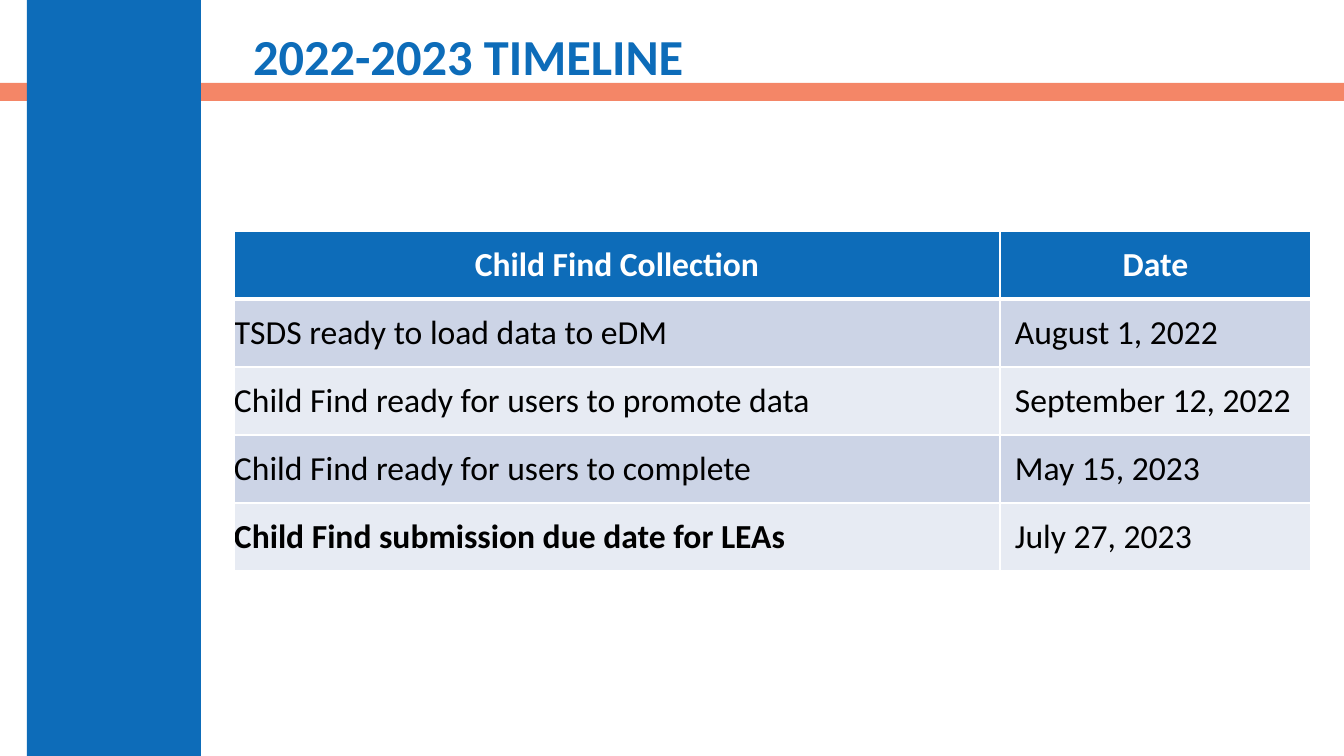
"""Build the 2022-2023 timeline slide with its Child Find date table."""
from pptx import Presentation
from pptx.dml.color import RGBColor
from pptx.enum.shapes import MSO_SHAPE
from pptx.enum.text import MSO_ANCHOR, PP_ALIGN
from pptx.oxml import parse_xml
from pptx.oxml.ns import nsdecls
from pptx.util import Emu, Pt

PX = 914400 / 100.8
BLUE, CORAL, WHITE, BLACK = "0D6CB9", "F16038", "FFFFFF", "000000"
BANDS = ["E7EBF3", "CCD4E6"]
ROWS = [
    ("Child Find Collection", "Date"),
    ("TSDS ready to load data to eDM", "August 1, 2022"),
    ("Child Find ready for users to promote data", "September 12, 2022"),
    ("Child Find ready for users to complete", "May 15, 2023"),
    ("Child Find submission due date for LEAs", "July 27, 2023"),
]


def px(*lengths):
    return [Emu(round(n * PX)) for n in lengths]


def write(tf, text, size=24, color=BLACK, bold=False, align=PP_ALIGN.LEFT, spacing=1.0):
    p = tf.paragraphs[0]
    p.alignment, p.line_spacing = align, spacing
    r = p.add_run()
    r.text = text
    r.font.name, r.font.size, r.font.bold = "Calibri", Pt(size), bold
    r.font.color.rgb = RGBColor.from_string(color)


prs = Presentation()
prs.slide_width, prs.slide_height = px(1344, 756)
s = prs.slides.add_slide(prs.slide_layouts[5])

for box, color, alpha in [((0, 83, 1344, 18), CORAL, 76), ((27, 0, 174, 756), BLUE, 100)]:
    sp = s.shapes.add_shape(MSO_SHAPE.RECTANGLE, *px(*box))
    sp.shadow.inherit = False
    sp.line.fill.background()
    sp.fill.solid()
    sp.fill.fore_color.rgb = RGBColor.from_string(color)
    if alpha < 100:
        clr = sp.fill._xPr.solidFill.srgbClr
        clr.append(parse_xml(f'<a:alpha {nsdecls("a")} val="{alpha * 1000}"/>'))

title = s.shapes.title
title.left, title.top, title.width, title.height = px(243, 18, 1061, 83)
title.text_frame.vertical_anchor = MSO_ANCHOR.MIDDLE
write(title.text_frame, "2022-2023 TIMELINE", size=36, color=BLUE, bold=True, spacing=0.9)
s.shapes._spTree.append(title._element)

table = s.shapes.add_table(len(ROWS), 2, *px(234, 231, 1077, 340)).table
for column, width in zip(table.columns, px(766, 311)):
    column.width = width

for i, row in enumerate(ROWS):
    header, last = i == 0, i == len(ROWS) - 1
    for j, text in enumerate(row):
        cell = table.cell(i, j)
        indent = 15 if j == 1 and not header else 0
        cell.margin_left, cell.margin_top, cell.margin_right, cell.margin_bottom = px(indent, 0, 0, 0)
        cell.vertical_anchor = MSO_ANCHOR.MIDDLE
        tcPr = cell._tc.get_or_add_tcPr()
        for side in "LRTB":
            thick = (i, side) in [(0, "B"), (1, "T")]
            tcPr.append(parse_xml(
                f'<a:ln{side} {nsdecls("a")} w="{Pt(3 if thick else 1)}"><a:solidFill>'
                f'<a:srgbClr val="{WHITE}"/></a:solidFill></a:ln{side}>'))
        cell.fill.solid()
        cell.fill.fore_color.rgb = RGBColor.from_string(BLUE if header else BANDS[i % 2])
        write(cell.text_frame, text, color=WHITE if header else BLACK,
              bold=header or (last and j == 0),
              align=PP_ALIGN.CENTER if header else PP_ALIGN.LEFT)

prs.save("out.pptx")
